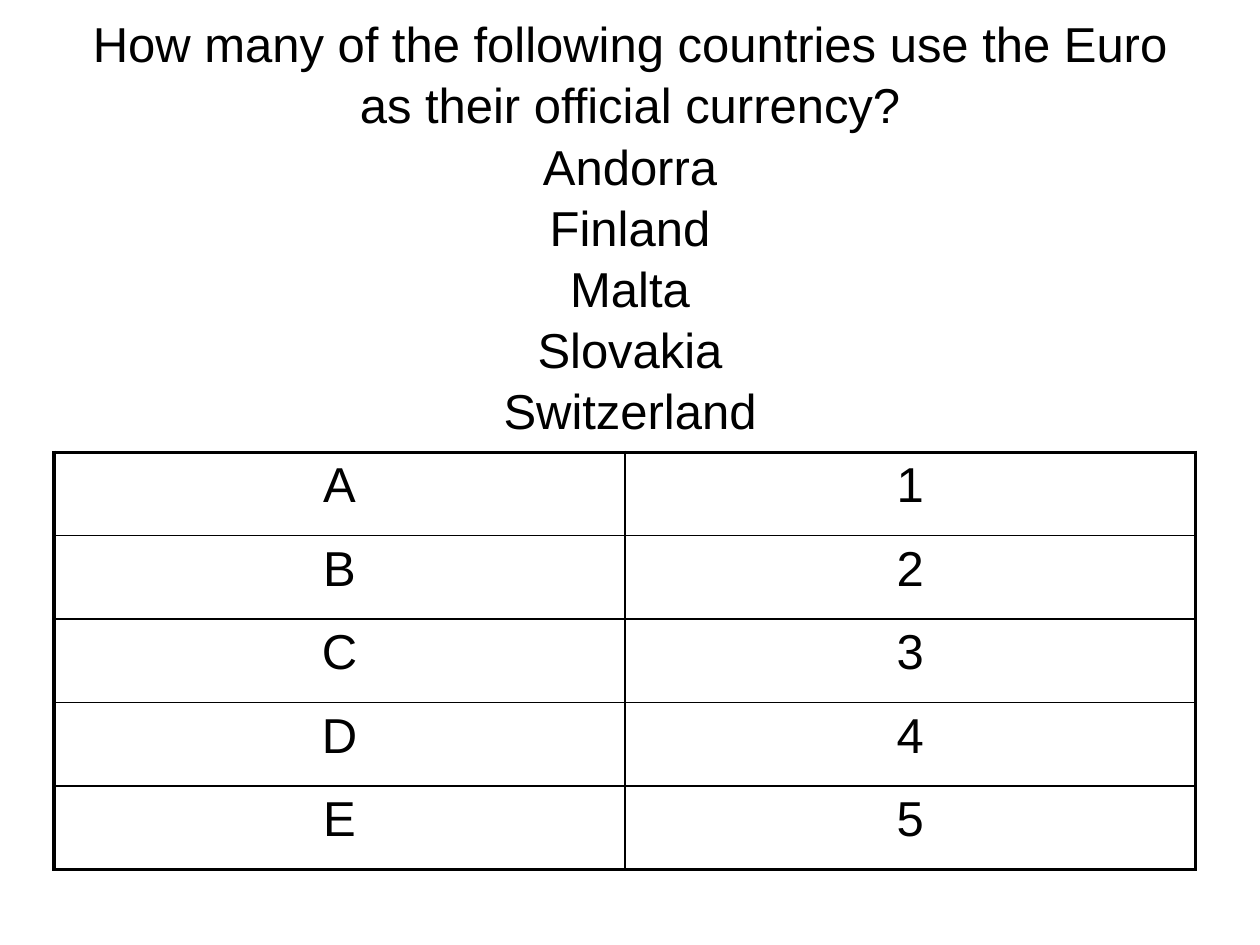
from lxml import etree
from pptx import Presentation
from pptx.dml.color import RGBColor
from pptx.enum.text import MSO_ANCHOR, MSO_AUTO_SIZE, PP_ALIGN
from pptx.oxml.ns import qn
from pptx.util import Inches, Pt

CENTER = PP_ALIGN.CENTER
MIDDLE = MSO_ANCHOR.MIDDLE
NO_FIT = MSO_AUTO_SIZE.NONE
BLACK = RGBColor(0x00, 0x00, 0x00)
FONT = "Arial"
TEXT_SIZE = 28
OUTER_LINE, INNER_LINE = 2.25, 1

QUESTION = "How many of the following countries use the Euro as their official currency?"
COUNTRIES = ["Andorra", "Finland", "Malta", "Slovakia", "Switzerland"]
ANSWERS = [("A", "1"), ("B", "2"), ("C", "3"), ("D", "4"), ("E", "5")]


def write_text(frame, text, size=TEXT_SIZE, color=BLACK, align=CENTER,
               line_spacing=None, space_before=None):
    """Write one paragraph; a vertical tab in the text is a line break."""
    para = frame.paragraphs[0]
    para.text = text
    para.alignment = align
    if line_spacing:
        para.line_spacing = line_spacing
    for span in para.runs:
        span.font.name = FONT
        span.font.size = Pt(size)
        span.font.color.rgb = color
    # Line breaks carry their own size
    for line_break in para._p.findall(qn("a:br")):
        etree.SubElement(line_break, qn("a:rPr")).set("sz", str(size * 100))
    # Space before as a percentage of the line
    if space_before:
        spacing = etree.SubElement(para._p.get_or_add_pPr(), qn("a:spcBef"))
        percent = etree.SubElement(spacing, qn("a:spcPct"))
        percent.set("val", str(space_before * 1000))


def set_borders(cell, **widths):
    """Draw the cell's borders, given in points by side."""
    properties = cell._tc.get_or_add_tcPr()
    for index, side in enumerate(("left", "right", "top", "bottom")):
        line = etree.Element(qn("a:ln" + side[0].upper()))
        line.set("w", str(Pt(widths[side])))
        fill = etree.SubElement(line, qn("a:solidFill"))
        etree.SubElement(fill, qn("a:srgbClr")).set("val", str(BLACK))
        properties.insert(index, line)


def add_question(page):
    title = page.shapes.title
    title.left, title.top = Inches(0.5), Inches(0.3)
    title.width, title.height = Inches(9), Inches(2.98)
    frame = title.text_frame
    frame.word_wrap = True
    frame.auto_size = NO_FIT
    frame.vertical_anchor = MIDDLE
    write_text(frame, "\v".join([QUESTION, *COUNTRIES]), line_spacing=1.04)


def add_answers(page):
    row_count, column_count = len(ANSWERS), len(ANSWERS[0])
    table = page.shapes.add_table(row_count, column_count, Inches(0.43), Inches(3.59),
                                  Inches(9.06), Inches(3.31)).table
    table.first_row = False
    table.horz_banding = False
    for row, answer in enumerate(ANSWERS):
        for column, text in enumerate(answer):
            cell = table.cell(row, column)
            cell.fill.background()
            write_text(cell.text_frame, text, space_before=20)
            # Heavy lines only around the outside of the table
            set_borders(
                cell,
                left=OUTER_LINE if column == 0 else INNER_LINE,
                right=OUTER_LINE if column == column_count - 1 else INNER_LINE,
                top=OUTER_LINE if row == 0 else INNER_LINE,
                bottom=OUTER_LINE if row == row_count - 1 else INNER_LINE,
            )


def main():
    deck = Presentation()
    deck.slide_width, deck.slide_height = Inches(10), Inches(7.5)
    page = deck.slides.add_slide(deck.slide_layouts[5])
    add_question(page)
    add_answers(page)
    deck.save("out.pptx")


if __name__ == "__main__":
    main()
